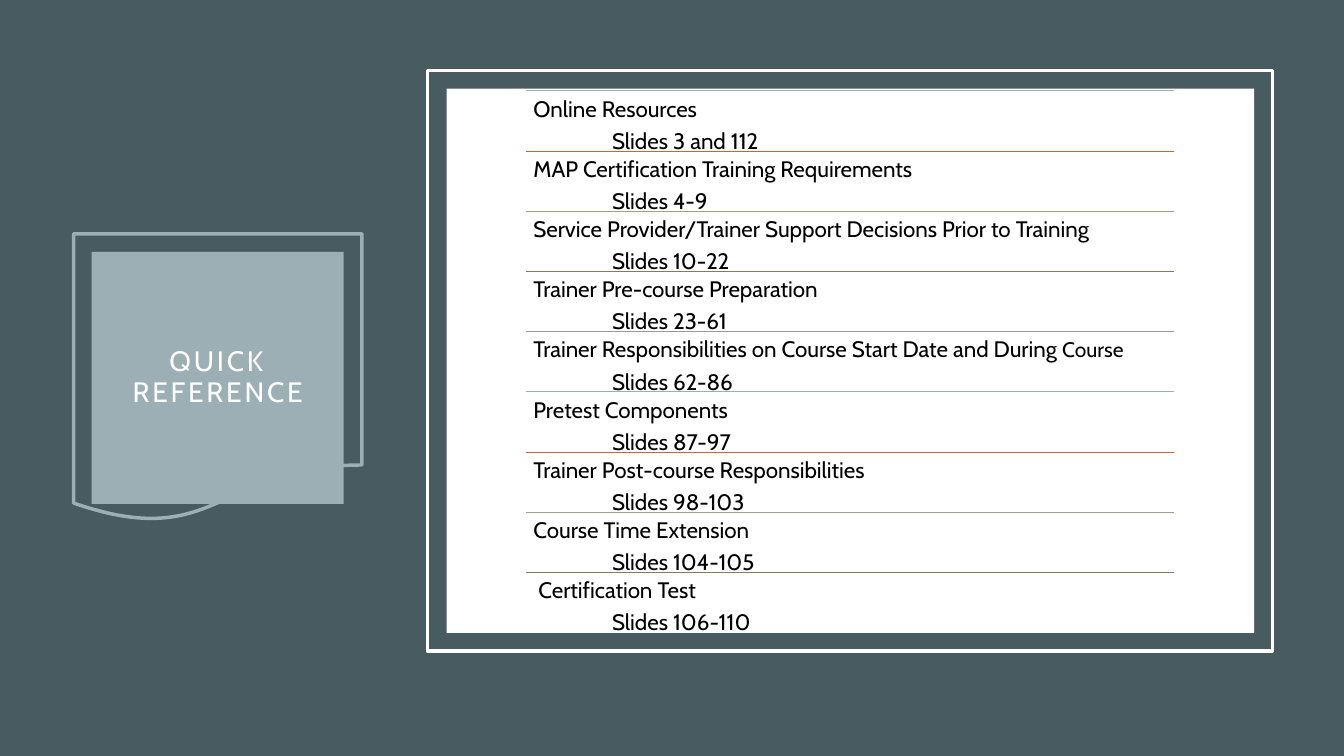
from pptx import Presentation
from pptx.dml.color import RGBColor
from pptx.enum.shapes import MSO_CONNECTOR, MSO_SHAPE
from pptx.enum.text import MSO_ANCHOR as ANCHOR, PP_ALIGN as ALIGN
from pptx.oxml.ns import qn
from pptx.util import Inches, Pt
from lxml.etree import SubElement

COLORS = {
    "background": "475B61",
    "mist": "9BAFB5",
    "rust": "C96731",
    "sage": "9CA383",
    "umber": "87795D",
    "stone": "A0988C",
    "white": "FFFFFF",
    "black": "000000",
}
RULE_COLORS = ["mist", "rust", "sage", "umber", "stone"]

# Each topic is a list of (text, size) runs, followed by its slide range.
TOPICS = [
    ([("Online Resources", 16)], "Slides 3 and 112"),
    ([("MAP Certification Training Requirements", 16)], "Slides 4-9"),
    ([("Service Provider/Trainer Support Decisions Prior to Training", 16)], "Slides 10-22"),
    ([("Trainer Pre-course Preparation", 16)], "Slides 23-61"),
    ([("Trainer Responsibilities on Course Start Date and During", 16), (" Course", 15)],
     "Slides 62-86"),
    ([("Pretest Components", 16)], "Slides 87-97"),
    ([("Trainer Post-course Responsibilities", 16)], "Slides 98-103"),
    ([("Course Time Extension", 16)], "Slides 104-105"),
    ([("Certification Test", 16)], "Slides 106-110"),
]
LIST_LEFT, LIST_TOP, LIST_WIDTH = 5.22, 0.9, 6.42
ROW_HEIGHT = (5.68 - LIST_TOP) / (len(TOPICS) - 1)


def color(name):
    return RGBColor.from_string(COLORS[name])


class ReferenceSlide:
    font_name = "Cabin"

    def __init__(self, presentation):
        self.slide = presentation.slides.add_slide(presentation.slide_layouts[6])
        fill = self.slide.background.fill
        fill.solid()
        fill.fore_color.rgb = color("background")

    def panel(self, kind, left, top, width, height, fill=None, line=None):
        shape = self.slide.shapes.add_shape(
            kind, Inches(left), Inches(top), Inches(width), Inches(height))
        shape.shadow.inherit = False
        if fill:
            shape.fill.solid()
            shape.fill.fore_color.rgb = color(fill)
        else:
            shape.fill.background()
        if line:
            shape.line.color.rgb = color(line)
            shape.line.width = Pt(2.5)
        else:
            shape.line.fill.background()
        return shape

    def set_insets(self, frame, inset):
        frame.word_wrap = True
        frame.margin_left = frame.margin_right = Inches(inset)
        frame.margin_top = frame.margin_bottom = Inches(inset)

    def style_run(self, run, size, color_name):
        run.font.name = self.font_name
        run.font.size = Pt(size)
        run.font.color.rgb = color(color_name)

    def title(self, shape, text):
        frame = shape.text_frame
        self.set_insets(frame, 0.2)
        frame.vertical_anchor = ANCHOR.MIDDLE
        frame.text = text
        paragraph = frame.paragraphs[0]
        paragraph.alignment = ALIGN.CENTER
        paragraph.line_spacing = 0.9
        run = paragraph.runs[0]
        self.style_run(run, 20, "white")
        run.font._element.set("spc", "200")

    def rule(self, shapes, top, color_name):
        left, right = Inches(LIST_LEFT), Inches(LIST_LEFT + LIST_WIDTH)
        line = shapes.add_connector(
            MSO_CONNECTOR.STRAIGHT, left, Inches(top), right, Inches(top))
        line.line.color.rgb = color(color_name)
        line.line.width = Pt(0.5)
        SubElement(line._element.spPr, qn("a:effectLst"))

    def topic(self, shapes, top, heading_runs, slide_range, indent=0):
        box = shapes.add_textbox(
            Inches(LIST_LEFT), Inches(top), Inches(LIST_WIDTH), Inches(ROW_HEIGHT))
        frame = box.text_frame
        self.set_insets(frame, 0.07)
        heading, pages = frame.paragraphs[0], frame.add_paragraph()
        for text, size in heading_runs:
            run = heading.add_run()
            run.text = text
            self.style_run(run, size, "black")
        pages.text = "\t" + slide_range
        self.style_run(pages.runs[0], 16, "black")
        for paragraph in (heading, pages):
            paragraph.line_spacing = 0.9
            paragraph.space_after = Pt(5.6)
        if indent:
            heading._p.get_or_add_pPr().set("marL", str(Inches(indent)))
        tabs = SubElement(pages._p.get_or_add_pPr(), qn("a:tabLst"))
        SubElement(tabs, qn("a:tab"), pos=str(Inches(0.78)), algn="l")

    def topic_list(self):
        shapes = self.slide.shapes.add_group_shape().shapes
        last = len(TOPICS) - 1
        for index, (heading_runs, slide_range) in enumerate(TOPICS):
            top = LIST_TOP + index * ROW_HEIGHT
            self.rule(shapes, top, RULE_COLORS[index % len(RULE_COLORS)])
            self.topic(shapes, top, heading_runs, slide_range,
                       indent=0.05 if index == last else 0)


def main():
    presentation = Presentation()
    presentation.slide_width = Inches(13.33)
    presentation.slide_height = Inches(7.5)
    page = ReferenceSlide(presentation)
    page.panel(MSO_SHAPE.FLOWCHART_DOCUMENT, 0.73, 2.32, 2.86, 2.86, line="mist")
    title_panel = page.panel(MSO_SHAPE.RECTANGLE, 0.91, 2.5, 2.5, 2.5, fill="mist")
    page.title(title_panel, "QUICK REFERENCE")
    page.panel(MSO_SHAPE.RECTANGLE, 4.24, 0.7, 8.38, 5.76, line="white")
    page.panel(MSO_SHAPE.RECTANGLE, 4.43, 0.88, 8.01, 5.4, fill="white")
    page.topic_list()
    presentation.save("out.pptx")


if __name__ == "__main__":
    main()
